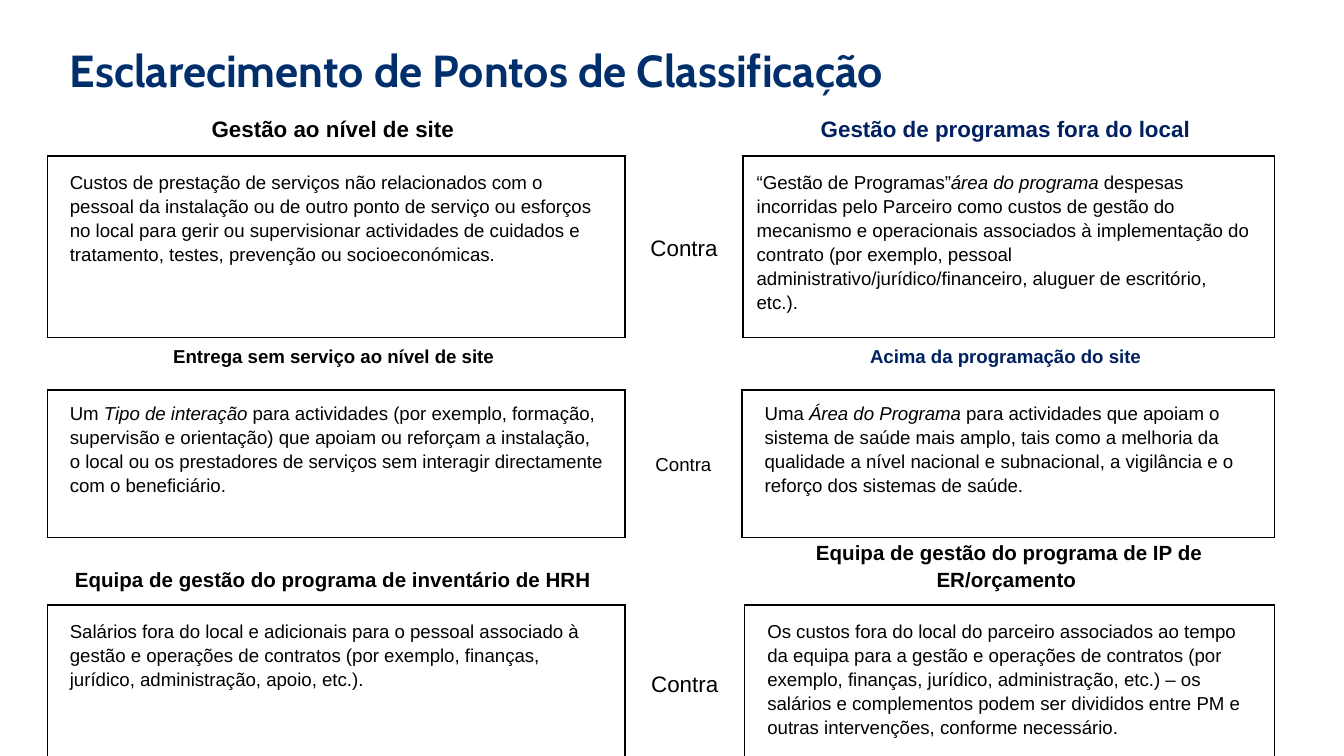
from dataclasses import dataclass

from lxml import etree
from pptx import Presentation
from pptx.dml.color import RGBColor
from pptx.enum.text import MSO_ANCHOR, PP_ALIGN
from pptx.oxml.ns import qn
from pptx.table import _Cell
from pptx.util import Inches, Pt

TOP, MIDDLE, BOTTOM = MSO_ANCHOR.TOP, MSO_ANCHOR.MIDDLE, MSO_ANCHOR.BOTTOM
LEFT, CENTER = PP_ALIGN.LEFT, PP_ALIGN.CENTER


@dataclass(frozen=True)
class Theme:
    title: str = "002F6C"
    navy: str = "002060"
    black: str = "000000"
    display: str = "Cabin"
    font: str = "Arial"
    huge: float = 24
    body: float = 10
    thick: float = 1.11
    thin: float = 0.56
    lead: float = 1.15


@dataclass(frozen=True)
class Style:
    size: float
    color: str = "000000"
    bold: bool = False
    align: PP_ALIGN = CENTER
    anchor: MSO_ANCHOR = MIDDLE
    inset: tuple[float, float] = (0.1, 0.1)


@dataclass(frozen=True)
class Pair:
    top: float
    gap: float
    rows: tuple[float, float]
    heads: tuple[str, str]
    texts: tuple[list[str], list[str]]
    size: float
    versus: float
    color: str
    anchor: MSO_ANCHOR = BOTTOM
    pad: float = 0.1
    above: float = 0.07
    inset: tuple[float, float] = (0.17, 0.16)


THEME = Theme()
EDGE, WIDTH, FIRST = 0.35, 9.13, 4.3
INDENT = (0.17, 0.16)

PAIRS = [
    Pair(0.75, 0.88, (0.41, 1.27),
         ("Gestão ao nível de site ", "Gestão de programas fora do local "),
         (["Custos de prestação de serviços não relacionados com o pessoal da "
           "instalação ou de outro ponto de serviço ou esforços no local para "
           "gerir ou supervisionar actividades de cuidados e tratamento, testes, "
           "prevenção ou socioeconómicas."],
          ["“Gestão de Programas”", "área do programa ",
           "despesas incorridas pelo Parceiro como custos de gestão do mecanismo "
           "e operacionais associados à implementação do contrato (por exemplo, "
           "pessoal administrativo/jurídico/financeiro, aluguer de escritório, "
           "etc.)."]),
         12, 12, THEME.navy, inset=(0.1, 0.16)),
    Pair(2.39, 0.87, (0.51, 1.1),
         ("Entrega sem serviço ao nível de site ", "Acima da programação do site "),
         (["Um ", "Tipo de interação ",
           "para actividades (por exemplo, formação, supervisão e orientação) que "
           "apoiam ou reforçam a instalação, o local ou os prestadores de serviços "
           "sem interagir directamente com o beneficiário."],
          ["Uma ", "Área do Programa ",
           "para actividades que apoiam o sistema de saúde mais amplo, tais como a "
           "melhoria da qualidade a nível nacional e subnacional, a vigilância e o "
           "reforço dos sistemas de saúde."]),
         10, 10, THEME.navy, MIDDLE, 0.08, 0.08),
    Pair(3.91, 0.89, (0.59, 1.09),
         ("Equipa de gestão do programa de inventário de HRH ",
          "Equipa de gestão do programa de IP de ER/orçamento "),
         (["Salários fora do local e adicionais para o pessoal associado à gestão "
           "e operações de contratos (por exemplo, finanças, jurídico, "
           "administração, apoio, etc.)."],
          ["Os custos fora do local do parceiro associados ao tempo da equipa para "
           "a gestão e operações de contratos (por exemplo, finanças, jurídico, "
           "administração, etc.) – os salários e complementos podem ser divididos "
           "entre PM e outras intervenções, conforme necessário."]),
         11, 12, THEME.black),
]


def border(cell: _Cell, sides: dict[str, float]) -> None:
    props = cell._tc.get_or_add_tcPr()
    for spot, side in enumerate("LRTB"):
        line = etree.Element(qn(f"a:ln{side}"))
        if side in sides:
            line.set("w", str(Pt(sides[side])))
            fill = etree.SubElement(line, qn("a:solidFill"))
            etree.SubElement(fill, qn("a:srgbClr"), val=THEME.black)
        else:
            etree.SubElement(line, qn("a:noFill"))
        props.insert(spot, line)


def write(cell: _Cell, parts: list[str], style: Style, pads: tuple[float, float],
          sides: dict[str, float]) -> None:
    cell.fill.background()
    border(cell, sides)
    cell.margin_left, cell.margin_right = map(Inches, style.inset)
    cell.margin_top, cell.margin_bottom = map(Inches, pads)
    cell.vertical_anchor = style.anchor
    para = cell.text_frame.paragraphs[0]
    para.alignment = style.align
    para.line_spacing = THEME.lead
    font = para.font
    font.name, font.size, font.bold = THEME.font, Pt(style.size), style.bold
    font.color.rgb = RGBColor.from_string(style.color)
    for spot, part in enumerate(parts):
        run = para.add_run()
        run.text = part
        if spot % 2:
            run.font.italic = True


def draw(slide, pair: Pair) -> None:
    frame = slide.shapes.add_table(
        2, 3, Inches(EDGE), Inches(pair.top), Inches(WIDTH), Inches(sum(pair.rows)))
    table = frame.table
    table.first_row = table.horz_banding = False
    for col, width in zip(table.columns, (FIRST, pair.gap, WIDTH - FIRST - pair.gap)):
        col.width = Inches(width)
    for row, height in zip(table.rows, pair.rows):
        row.height = Inches(height)

    thick, thin = THEME.thick, THEME.thin
    boxes = ({"L": thin, "R": thick, "T": thick, "B": thin},
             {"L": thick, "R": thin, "T": thick, "B": thin})
    colors = (THEME.black, pair.color)
    insets = (INDENT, pair.inset)
    pads = (pair.pad, pair.pad)
    for side, col in enumerate((0, 2)):
        head = Style(pair.size, colors[side], True, anchor=pair.anchor)
        body = Style(THEME.body, align=LEFT, anchor=TOP, inset=insets[side])
        write(table.cell(0, col), [pair.heads[side]], head, (pair.above, pair.pad),
              {"B": thick})
        write(table.cell(1, col), pair.texts[side], body, pads, boxes[side])
    versus = Style(pair.versus)
    write(table.cell(0, 1), [], versus, (0, 0), {})
    write(table.cell(1, 1), ["Contra"], versus, pads, {"L": thick, "R": thick})


def title(slide, text: str) -> None:
    box = slide.shapes.add_textbox(Inches(0.42), Inches(0.32), Inches(8.5), Inches(0.5))
    frame = box.text_frame
    frame.word_wrap = True
    frame.vertical_anchor = BOTTOM
    frame.margin_left = frame.margin_right = Inches(0.1)
    frame.margin_top = frame.margin_bottom = Inches(0.1)
    para = frame.paragraphs[0]
    para.text = text
    font = para.font
    font.name, font.size, font.bold = THEME.display, Pt(THEME.huge), True
    font.color.rgb = RGBColor.from_string(THEME.title)


def main() -> None:
    deck = Presentation()
    deck.slide_width, deck.slide_height = Inches(10), Inches(10 * 9 / 16)
    slide = deck.slides.add_slide(deck.slide_layouts[6])
    title(slide, "Esclarecimento de Pontos de Classificação")
    for pair in PAIRS:
        draw(slide, pair)
    deck.save("out.pptx")


if __name__ == "__main__":
    main()
